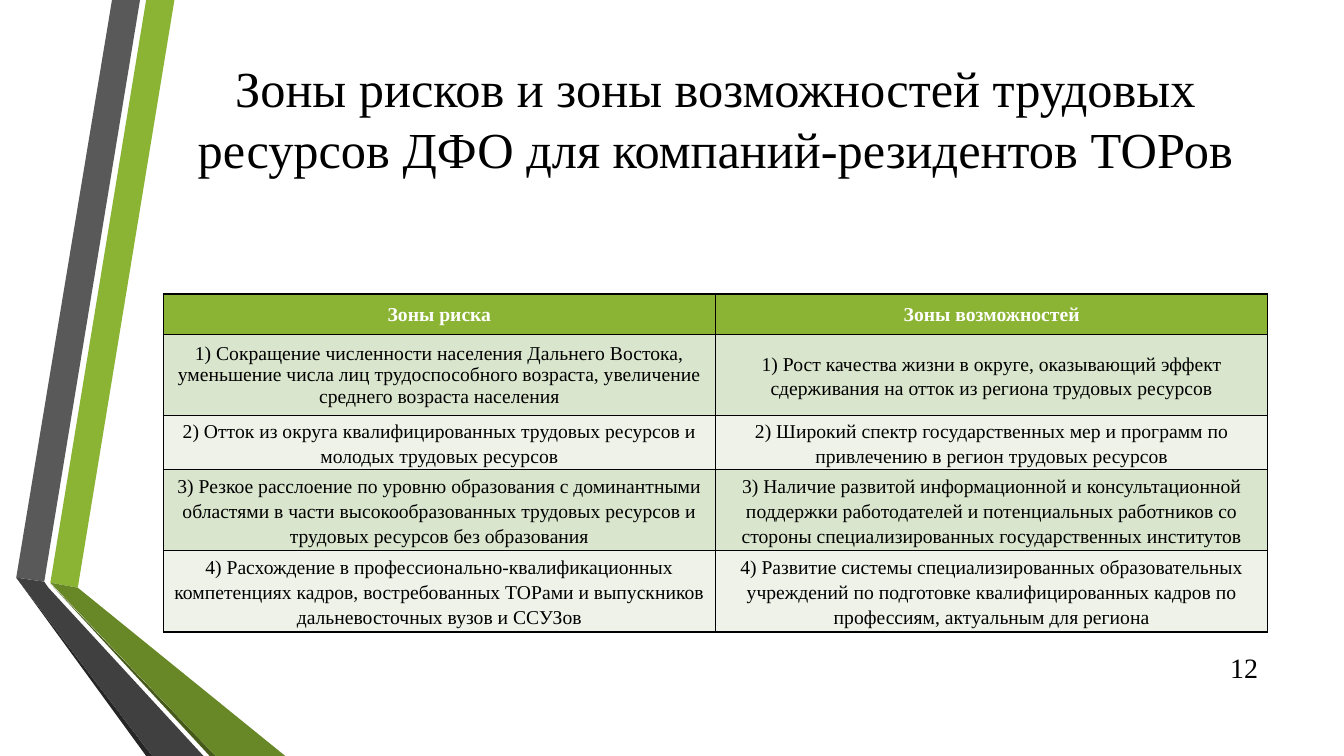
"""Build the slide on risk and opportunity zones of regional labour resources."""
import pptx
import pptx.dml.color
import pptx.enum.text
import pptx.oxml
import pptx.oxml.ns
import pptx.util

Pt = pptx.util.Pt
RGBColor = pptx.dml.color.RGBColor
CENTER = pptx.enum.text.PP_ALIGN.CENTER
RIGHT = pptx.enum.text.PP_ALIGN.RIGHT
MIDDLE = pptx.enum.text.MSO_ANCHOR.MIDDLE

BLACK = RGBColor(0x00, 0x00, 0x00)
WHITE = RGBColor(0xFF, 0xFF, 0xFF)
GREEN = RGBColor(0x8B, 0xB4, 0x34)
OLIVE = RGBColor(0x68, 0x87, 0x27)
DARK_OLIVE = RGBColor(0x46, 0x5A, 0x1A)
GRAY = RGBColor(0x59, 0x59, 0x59)
DARK_GRAY = RGBColor(0x40, 0x40, 0x40)
CHARCOAL = RGBColor(0x26, 0x26, 0x26)
BAND_DARK = RGBColor(0xDA, 0xE5, 0xCE)
BAND_LIGHT = RGBColor(0xEE, 0xF2, 0xE8)

FONT = "Times New Roman"
TITLE = "Зоны рисков и зоны возможностей трудовых ресурсов ДФО для компаний-резидентов ТОРов"
PAGE_NUMBER = "12"
ROWS = [
    ("Зоны риска", "Зоны возможностей"),
    ("1) Сокращение численности населения Дальнего Востока, уменьшение числа лиц трудоспособного возраста, увеличение среднего возраста населения",
     "1) Рост качества жизни в округе, оказывающий эффект сдерживания на отток из региона трудовых ресурсов"),
    ("2) Отток из округа квалифицированных трудовых ресурсов и молодых трудовых ресурсов",
     "2) Широкий спектр государственных мер и программ по привлечению в регион трудовых ресурсов"),
    ("3) Резкое расслоение по уровню образования с доминантными областями в части высокообразованных трудовых ресурсов и трудовых ресурсов без образования",
     "3) Наличие развитой информационной и консультационной поддержки работодателей и потенциальных работников со стороны специализированных государственных институтов"),
    ("4) Расхождение в профессионально-квалификационных компетенциях кадров, востребованных ТОРами и выпускников дальневосточных вузов и ССУЗов",
     "4) Развитие системы специализированных образовательных учреждений по подготовке квалифицированных кадров по профессиям, актуальным для региона"),
]
ROW_HEIGHTS = [29.2, 54, 35.4, 53.5, 53.5]
LEFT, WIDTH = 116.6, 789.1
TABLE_TOP = 210

RIBBONS = [
    (GREEN, [(36, 416.2), (55.6, 419.8), (124.6, 0), (104.4, 0)]),
    (GRAY, [(100, 0), (80, 0), (11.6, 412.6), (31.6, 415.5)]),
    (CHARCOAL, [(11.6, 412.6), (104.4, 540), (108.7, 540)]),
    (DARK_OLIVE, [(36, 416.9), (149.8, 540), (154, 540)]),
    (OLIVE, [(36, 416.2), (154, 540), (203.8, 540), (55.6, 419.8)]),
    (DARK_GRAY, [(11.6, 412.6), (108.7, 540), (145.4, 540), (34.6, 419.8), (31.6, 415.5)]),
]


def apply_format(target, values):
    for name, value in values.items():
        setattr(target, name, value)


def write_text(frame, text, size, color, alignment=CENTER, bold=False, spacing=1.0):
    frame.text = text
    paragraph = frame.paragraphs[0]
    apply_format(paragraph, {"alignment": alignment, "line_spacing": spacing})
    font = paragraph.runs[0].font
    apply_format(font, {"name": FONT, "size": Pt(size), "bold": bold})
    font.color.rgb = color


def add_ribbon(slide, color, points):
    corners = [(Pt(x), Pt(y)) for x, y in points]
    builder = slide.shapes.build_freeform(*corners[0])
    builder.add_line_segments(corners[1:], close=True)
    shape = builder.convert_to_shape()
    shape.shadow.inherit = False
    shape.fill.solid()
    shape.fill.fore_color.rgb = color
    shape.line.fill.background()


def add_borders(cell):
    properties = cell._tc.get_or_add_tcPr()
    for position, side in enumerate(("lnL", "lnR", "lnT", "lnB")):
        border = pptx.oxml.parse_xml(
            f'<a:{side} {pptx.oxml.ns.nsdecls("a")} w="12700"><a:solidFill>'
            f'<a:srgbClr val="{BLACK}"/></a:solidFill></a:{side}>')
        properties.insert(position, border)


def add_zone_table(slide):
    frame = slide.shapes.add_table(len(ROWS), 2, Pt(LEFT), Pt(TABLE_TOP), Pt(WIDTH), Pt(sum(ROW_HEIGHTS)))
    table = frame.table
    apply_format(table, {"first_row": True, "horz_banding": False})
    for column in table.columns:
        column.width = Pt(WIDTH / 2)
    for row_index, texts in enumerate(ROWS):
        table.rows[row_index].height = Pt(ROW_HEIGHTS[row_index])
        header = row_index == 0
        fill = GREEN if header else BAND_DARK if row_index % 2 else BAND_LIGHT
        for column_index, text in enumerate(texts):
            cell = table.cell(row_index, column_index)
            roomy = header or (row_index, column_index) == (1, 0)
            write_text(cell.text_frame, text, 14, WHITE if header else BLACK,
                       bold=header, spacing=1.0 if roomy else 1.15)
            cell.vertical_anchor = MIDDLE
            if not roomy:
                apply_format(cell, {"margin_left": Pt(5), "margin_right": Pt(5),
                                    "margin_top": 0, "margin_bottom": 0})
            cell.fill.solid()
            cell.fill.fore_color.rgb = fill
            add_borders(cell)


def main():
    presentation = pptx.Presentation()
    apply_format(presentation, {"slide_width": Pt(960), "slide_height": Pt(540)})
    slide = presentation.slides.add_slide(presentation.slide_layouts[5])

    for color, points in RIBBONS:
        add_ribbon(slide, color, points)

    number = slide.shapes.add_textbox(Pt(862.6), Pt(462.2), Pt(43.2), Pt(28.8))
    apply_format(number.text_frame, {"word_wrap": True, "vertical_anchor": MIDDLE})
    write_text(number.text_frame, PAGE_NUMBER, 20, BLACK, RIGHT)

    add_zone_table(slide)

    title = slide.shapes.title
    apply_format(title, {"left": Pt(LEFT), "top": Pt(15.1), "width": Pt(WIDTH), "height": Pt(138.2)})
    apply_format(title.text_frame, {"word_wrap": True, "vertical_anchor": MIDDLE})
    write_text(title.text_frame, TITLE, 36, BLACK)

    presentation.save("out.pptx")


if __name__ == "__main__":
    main()
